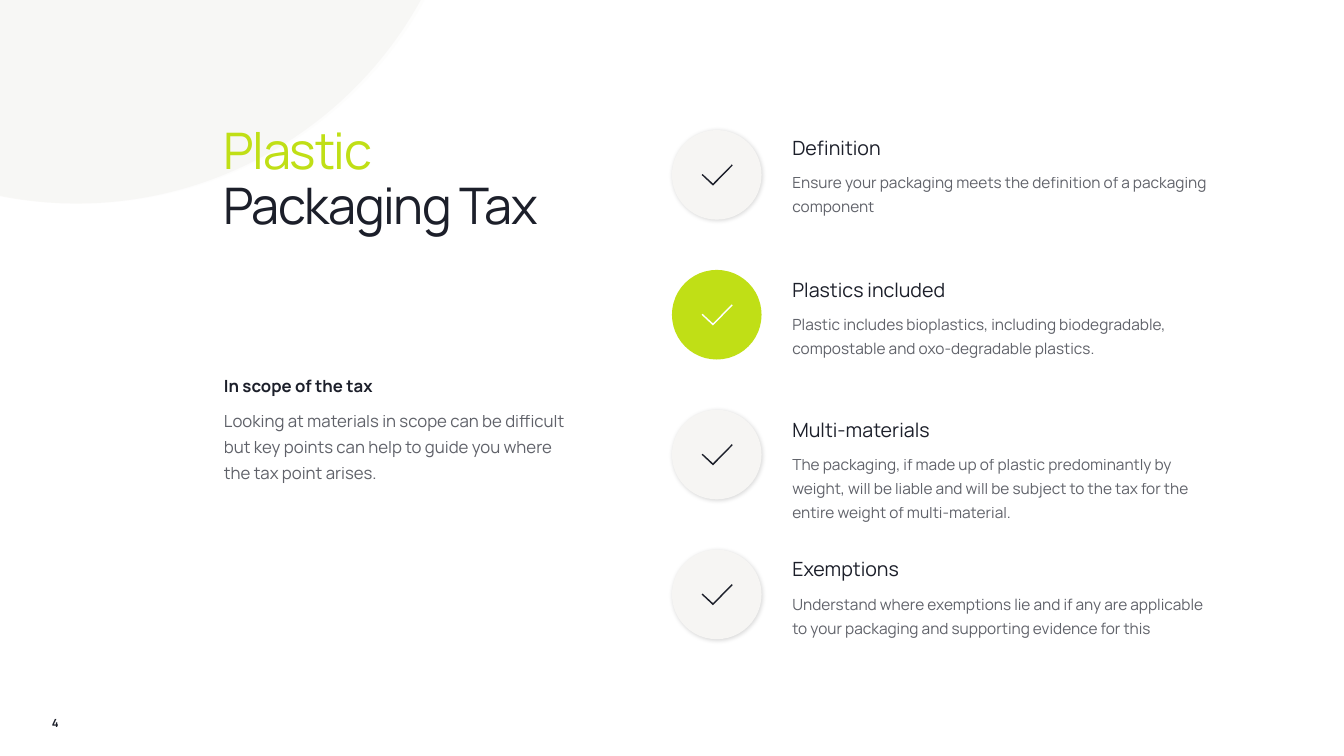
from pptx import Presentation
from pptx.dml.color import RGBColor
from pptx.enum.shapes import MSO_SHAPE
from pptx.enum.text import MSO_ANCHOR, MSO_AUTO_SIZE, PP_ALIGN
from pptx.oxml import parse_xml
from pptx.oxml.ns import nsdecls, qn
from pptx.util import Pt

OVAL = MSO_SHAPE.OVAL
MIDDLE = MSO_ANCHOR.MIDDLE
GROW = MSO_AUTO_SIZE.SHAPE_TO_FIT_TEXT
CENTER = PP_ALIGN.CENTER

FONT = "Manrope"
INK = RGBColor(0x1C, 0x1F, 0x2A)
LIME = RGBColor(0xC0, 0xDF, 0x16)
PALE = RGBColor(0xF6, 0xF5, 0xF3)
SAND = RGBColor(0xE1, 0xDE, 0xD7)
WHITE = RGBColor(0xFF, 0xFF, 0xFF)

# Corners of the tick, measured from its top left
TICK = [(22.2, 0.7), (21.5, 0), (8.1, 13.6), (0.7, 6.8), (0, 7.5), (8.1, 15.1)]

# Text top, heading, body, circle colour, tick colour
POINTS = [
    (89.3, "Definition",
     "Ensure your packaging meets the definition of a packaging component",
     PALE, INK),
    (190.3, "Plastics included",
     "Plastic includes bioplastics, including biodegradable, "
     "compostable and oxo-degradable plastics.",
     LIME, WHITE),
    (290.7, "Multi-materials",
     "The packaging, if made up of plastic predominantly by weight, will be "
     "liable and will be subject to the tax for the entire weight of multi-material.",
     PALE, INK),
    (390.2, "Exemptions",
     "Understand where exemptions lie and if any are applicable to your "
     "packaging and supporting evidence for this",
     PALE, INK),
]
CIRCLE_TOP, CIRCLE_PITCH = 92.9, 99.9


def set_alpha(element, percent):
    color = next(element.iter(qn("a:srgbClr")))
    color.append(parse_xml(f'<a:alpha {nsdecls("a")} val="{percent * 1000}"/>'))


def add_soft_shadow(shape):
    effects = shape._element.spPr.find(qn("a:effectLst"))
    effects.append(parse_xml(
        f'<a:outerShdw {nsdecls("a")} blurRad="{Pt(3)}" dist="{Pt(1)}" '
        'dir="2700000" algn="tl" rotWithShape="0"><a:srgbClr val="000000">'
        '<a:alpha val="15000"/></a:srgbClr></a:outerShdw>'))


def paint(shape, color):
    shape.shadow.inherit = False
    shape.fill.solid()
    shape.fill.fore_color.rgb = color
    shape.line.fill.background()


def add_circle(shapes, left, top, size, color):
    circle = shapes.add_shape(OVAL, Pt(left), Pt(top), Pt(size), Pt(size))
    paint(circle, color)
    return circle


def add_tick(shapes, left, top, color):
    corners = [(Pt(left + x), Pt(top + y)) for x, y in TICK]
    builder = shapes.build_freeform(*corners[0])
    builder.add_line_segments(corners[1:], close=True)
    paint(builder.convert_to_shape(), color)


def add_badge(page, top, circle_color, tick_color):
    shapes = page.shapes.add_group_shape().shapes
    circle = add_circle(shapes, 480, top, 64, circle_color)
    if circle_color == PALE:
        add_soft_shadow(circle)
    add_tick(shapes, 501.2, top + 24.6, tick_color)


def add_box(page, left, top, width, height, insets):
    box = page.shapes.add_textbox(Pt(left), Pt(top), Pt(width), Pt(height))
    frame = box.text_frame
    frame.word_wrap = True
    (frame.margin_left, frame.margin_top,
     frame.margin_right, frame.margin_bottom) = map(Pt, insets)
    return frame


def style(para, size, bold=False):
    para.font.name = FONT
    para.font.size = Pt(size)
    para.font.bold = bold
    para.font.color.rgb = INK


def add_heading_and_body(page, place, heading, body, sizes, bold=False):
    frame = add_box(page, *place, (0, 2.9, 17.3, 2.9))
    frame.auto_size = GROW
    head = frame.paragraphs[0]
    head.text = heading
    head.line_spacing = 1.3
    style(head, sizes[0], bold)
    detail = frame.add_paragraph()
    detail.text = body
    detail.line_spacing = 1.3
    detail.space_before = Pt(6)
    style(detail, sizes[1])
    set_alpha(detail._p.pPr, 70)


def add_title(page):
    frame = add_box(page, 160, 75, 720, 98.6, (0, 15.1, 0, 0))
    para = frame.paragraphs[0]
    para.line_spacing = 0.9
    style(para, 36)
    first = para.add_run()
    first.text = "Plastic"
    first.font.color.rgb = LIME
    para.add_line_break()
    second = para.add_run()
    second.text = "Packaging Tax"
    for span in (first, second):
        span._r.get_or_add_rPr().set("spc", "-100")


def add_page_number(page):
    frame = add_box(page, 0, 502, 79, 29, (7.2, 3.6, 7.2, 3.6))
    frame.vertical_anchor = MIDDLE
    para = frame.paragraphs[0]
    para.text = "4"
    para.alignment = CENTER
    style(para, 8, bold=True)


def main():
    deck = Presentation()
    deck.slide_width, deck.slide_height = Pt(960), Pt(540)
    page = deck.slides.add_slide(deck.slide_layouts[6])

    # Corner decoration
    for left, alpha in ((-226.8, 18), (-224, 5)):
        disc = add_circle(page.shapes, left, -416.9, 562.3, SAND)
        set_alpha(disc._element.spPr, alpha)

    # Title and introduction
    add_page_number(page)
    add_title(page)
    add_heading_and_body(
        page, (160, 261.4, 268.6, 86.4), "In scope of the tax",
        "Looking at materials in scope can be difficult but key points can "
        "help to guide you where the tax point arises.", (12, 12), bold=True)

    # Checklist
    for row, (top, heading, body, circle_color, tick_color) in enumerate(POINTS):
        add_badge(page, CIRCLE_TOP + row * CIRCLE_PITCH, circle_color, tick_color)
        add_heading_and_body(page, (566, top, 314.6, 67), heading, body, (14, 11))

    deck.save("out.pptx")


if __name__ == "__main__":
    main()
